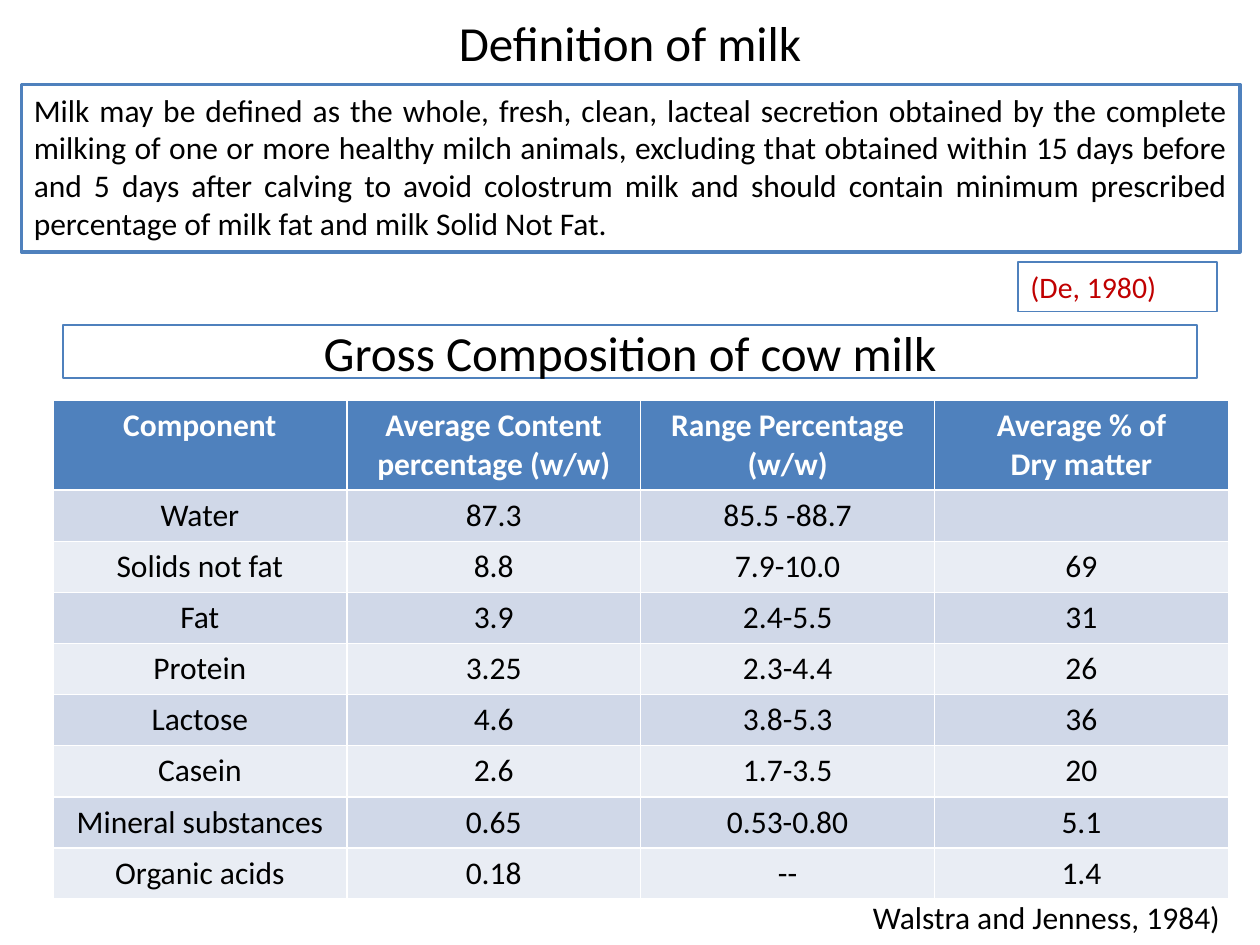
import pptx
import pptx.util
import pptx.dml.color
import pptx.enum.shapes
import pptx.enum.text

Inches, Pt = pptx.util.Inches, pptx.util.Pt
Align = pptx.enum.text.PP_ALIGN
Anchor = pptx.enum.text.MSO_ANCHOR
BLUE = "4F81BD"


def color(code):
    return pptx.dml.color.RGBColor.from_string(code)


def write(frame, text, size=18, ink="000000", bold=False, align=Align.LEFT,
          anchor=Anchor.TOP, wrap=True):
    frame.word_wrap = wrap
    frame.vertical_anchor = anchor
    frame.text = text
    for para in frame.paragraphs:
        para.alignment = align
        para.font.name = "Calibri"
        para.font.size = Pt(size)
        para.font.bold = bold
        para.font.color.rgb = color(ink)


deck = pptx.Presentation()
deck.slide_width, deck.slide_height = Inches(10), Inches(7.5)
slide = deck.slides.add_slide(deck.slide_layouts[5])

# Title
title = slide.shapes.title
title.left, title.top = Inches(0.5), Inches(0.08)
title.width, title.height = Inches(9), Inches(0.5)
write(title.text_frame, "Definition of milk", size=28, align=Align.CENTER,
      anchor=Anchor.MIDDLE)

# Framed texts: definition, its source, table heading
meaning = (
    "Milk may be defined as the whole, fresh, clean, lacteal secretion obtained "
    "by the complete milking of one or more healthy milch animals, excluding that "
    "obtained within 15 days before and 5 days after calving to avoid colostrum "
    "milk and should contain minimum prescribed percentage of milk fat and milk "
    "Solid Not Fat."
)
frames = [
    ((0.17, 0.67, 9.67, 1.33), 2, meaning, dict(align=Align.JUSTIFY)),
    ((8.08, 2.08, 1.58, 0.39), 0.75, "(De, 1980)", dict(size=17, ink="C00000")),
    ((0.5, 2.58, 9, 0.42), 0.75, "Gross Composition of cow milk",
     dict(size=28, align=Align.CENTER, anchor=Anchor.MIDDLE)),
]
for place, weight, text, look in frames:
    box = slide.shapes.add_shape(pptx.enum.shapes.MSO_SHAPE.RECTANGLE,
                                 *map(Inches, place))
    box.shadow.inherit = False
    box.fill.background()
    box.line.color.rgb = color(BLUE)
    box.line.width = Pt(weight)
    write(box.text_frame, text, **look)

# Composition table
rows = [
    ("Component", "Average Content\npercentage (w/w)",
     "Range Percentage\n(w/w)", "Average % of\nDry matter"),
    ("Water", "87.3", "85.5 -88.7", ""),
    ("Solids not fat", "8.8", "7.9-10.0", "69"),
    ("Fat", "3.9", "2.4-5.5", "31"),
    ("Protein", "3.25", "2.3-4.4", "26"),
    ("Lactose", "4.6", "3.8-5.3", "36"),
    ("Casein", "2.6", "1.7-3.5", "20"),
    ("Mineral substances", "0.65", "0.53-0.80", "5.1"),
    ("Organic acids", "0.18", "--", "1.4"),
]
table = slide.shapes.add_table(len(rows), 4, Inches(0.42), Inches(3.18),
                               Inches(9.33), Inches(3.9)).table
for r, row in enumerate(rows):
    head = r == 0
    table.rows[r].height = Inches(0.69 if head else 0.4)
    band = BLUE if head else ("E9EDF4", "D0D8E8")[r % 2]
    for c, text in enumerate(row):
        cell = table.cell(r, c)
        cell.fill.solid()
        cell.fill.fore_color.rgb = color(band)
        write(cell.text_frame, text, bold=head, align=Align.CENTER,
              ink="FFFFFF" if head else "000000")

# Table source
credit = slide.shapes.add_textbox(Inches(6.83), Inches(7.08),
                                  Inches(2.99), Inches(0.4))
write(credit.text_frame, "Walstra and Jenness, 1984)", wrap=False)

deck.save("out.pptx")
